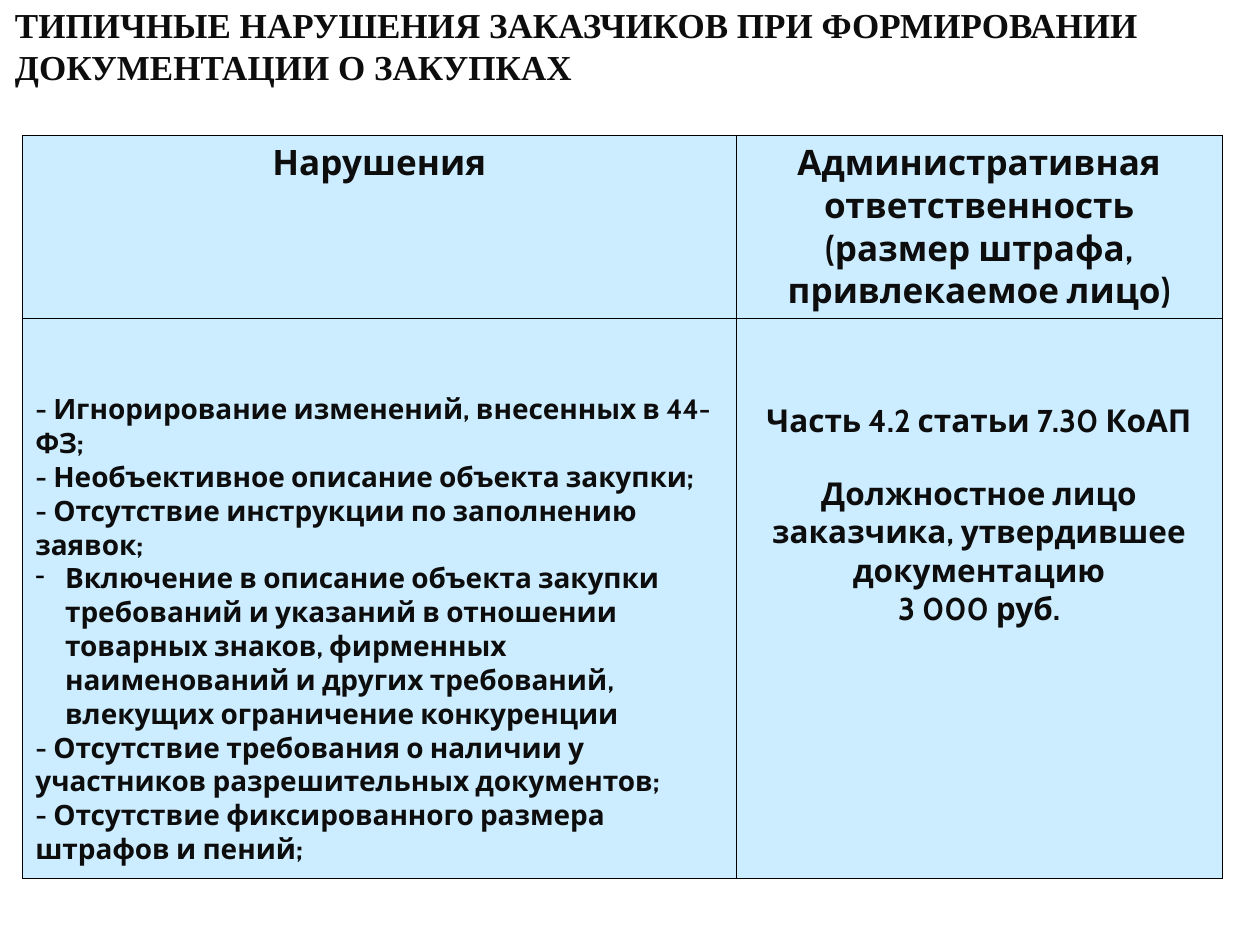
import pptx
import pptx.dml.color
import pptx.enum.text
import pptx.oxml
import pptx.oxml.ns
import pptx.util
from lxml import etree

Pt = pptx.util.Pt
CENTER = pptx.enum.text.PP_ALIGN.CENTER
INK = "0D0D0D"
CELL_FILL = "CCECFF"
BORDER = "000000"

TITLE = "ТИПИЧНЫЕ НАРУШЕНИЯ ЗАКАЗЧИКОВ ПРИ ФОРМИРОВАНИИ ДОКУМЕНТАЦИИ О ЗАКУПКАХ"
HEADERS = [
    "Нарушения",
    "Административная ответственность (размер штрафа, привлекаемое лицо)",
]
VIOLATIONS = [
    "- Игнорирование изменений, внесенных в 44-ФЗ;",
    "- Необъективное описание объекта закупки;",
    "- Отсутствие инструкции по заполнению заявок;",
    "Включение в описание объекта закупки требований и указаний в отношении "
    "товарных знаков, фирменных наименований и других требований, "
    "влекущих ограничение конкуренции",
    "- Отсутствие требования о наличии у участников разрешительных документов;",
    "- Отсутствие фиксированного размера штрафов и пений;",
]
PENALTY = [
    "Часть 4.2 статьи 7.30 КоАП",
    "Должностное лицо заказчика, утвердившее документацию",
    "3 000 руб.",
]


def rgb(value):
    return pptx.dml.color.RGBColor.from_string(value)


def add_run(p, text, size, font):
    r = p.add_run()
    r.text = text
    r.font.size = Pt(size)
    r.font.name = font
    r.font.bold = True
    r.font.color.rgb = rgb(INK)


def add_child(parent, tag, **attributes):
    return etree.SubElement(parent, pptx.oxml.ns.qn(tag), **attributes)


def add_color(parent, value):
    add_child(parent, "a:srgbClr", val=value)


def set_borders(cell):
    tc_pr = cell._tc.get_or_add_tcPr()
    for index, side in enumerate(("a:lnL", "a:lnR", "a:lnT", "a:lnB")):
        line = add_child(tc_pr, side, w=str(Pt(0.45)))
        add_color(add_child(line, "a:solidFill"), BORDER)
        tc_pr.insert(index, line)


def set_dash_bullet(p):
    """Turn the paragraph into a list item with a hanging dash."""
    p_pr = p._p.get_or_add_pPr()
    p_pr.set("marL", str(Pt(17)))
    p_pr.set("indent", str(-Pt(17)))
    add_color(add_child(p_pr, "a:buClr"), BORDER)
    add_child(p_pr, "a:buChar", char="-")


def fill_cell(cell, lines, size, align=None, top=3.6):
    cell.fill.solid()
    cell.fill.fore_color.rgb = rgb(CELL_FILL)
    set_borders(cell)
    cell.margin_top = Pt(top)
    tf = cell.text_frame
    for i, line in enumerate(lines):
        p = tf.paragraphs[0] if i == 0 else tf.add_paragraph()
        p.alignment = align
        add_run(p, line, size, "Cabin")
    return tf.paragraphs


def add_title(s):
    tf = s.shapes.add_textbox(Pt(1.5), Pt(-1.5), Pt(708.5), Pt(55.5)).text_frame
    tf.word_wrap = True
    add_run(tf.paragraphs[0], TITLE, 20, "Times New Roman")


def add_violations_table(s):
    widths, heights = (407.5, 278), (104.5, 320)
    table = s.shapes.add_table(
        2, 2, Pt(13), Pt(77.5), Pt(sum(widths)), Pt(sum(heights))
    ).table
    for column, width in zip(table.columns, widths):
        column.width = Pt(width)
    for row, height in zip(table.rows, heights):
        row.height = Pt(height)

    for i, header in enumerate(HEADERS):
        fill_cell(table.cell(0, i), [header], 20, CENTER)
    violations = fill_cell(table.cell(1, 0), VIOLATIONS, 16, top=42.5)
    set_dash_bullet(violations[3])
    penalty = fill_cell(table.cell(1, 1), PENALTY, 18, CENTER, top=47.5)
    penalty[1].space_before = Pt(20)


def main():
    prs = pptx.Presentation()
    prs.slide_width, prs.slide_height = Pt(720), Pt(540)
    s = prs.slides.add_slide(prs.slide_layouts[6])
    add_title(s)
    add_violations_table(s)
    prs.save("out.pptx")


if __name__ == "__main__":
    main()
